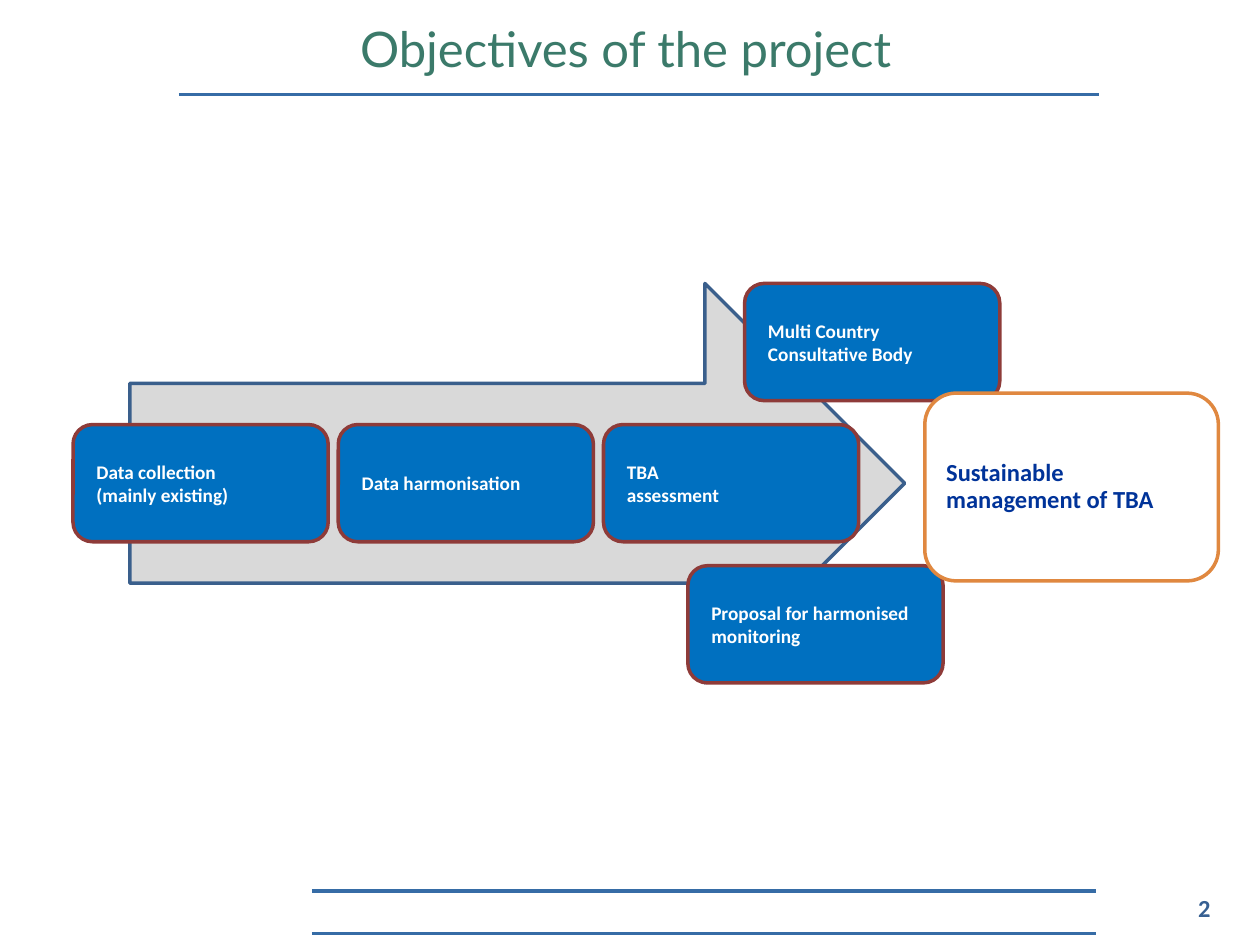
from lxml.etree import SubElement
from pptx import Presentation
from pptx.dml.color import RGBColor
from pptx.enum.shapes import MSO_CONNECTOR, MSO_SHAPE
from pptx.enum.text import MSO_ANCHOR, PP_ALIGN
from pptx.oxml.ns import qn
from pptx.util import Inches, Pt

COLORS = {
    "rule": "366CA6",
    "title": "3B7A6A",
    "number": "376092",
    "arrow": "D9D9D9",
    "arrow_edge": "3A5F8C",
    "card": "0070C0",
    "card_edge": "8E3B39",
    "goal_edge": "E08840",
    "goal_text": "003399",
    "white": "FFFFFF",
}
COLUMNS, ROWS = 100, 75
CARD_SIZE = (20.25, 9.3)
STEP_LEFT, STEP_TOP, STEP_PITCH = 5.8, 33.7, 21.05


class SlideBuilder:
    def __init__(self, presentation):
        self.slide = presentation.slides.add_slide(presentation.slide_layouts[5])
        self.column = presentation.slide_width / COLUMNS
        self.row = presentation.slide_height / ROWS

    def place(self, left, top, width, height):
        return (round(left * self.column), round(top * self.row),
                round(width * self.column), round(height * self.row))

    def color(self, name):
        return RGBColor.from_string(COLORS[name])

    def set_text(self, shape, text, size, color, bold=True, font="Calibri",
                 inset=(0, 0), anchor=MSO_ANCHOR.MIDDLE, align=PP_ALIGN.LEFT,
                 line_spacing=None):
        frame = shape.text_frame
        frame.text = text
        horizontal, vertical = (Inches(value) for value in inset)
        frame_format = {
            "word_wrap": True, "vertical_anchor": anchor,
            "margin_left": horizontal, "margin_right": horizontal,
            "margin_top": vertical, "margin_bottom": vertical,
        }
        paragraph = frame.paragraphs[0]
        paragraph_format = {"alignment": align, "line_spacing": line_spacing}
        font_format = {"name": font, "size": Pt(size), "bold": bold}
        formats = [(frame, frame_format), (paragraph, paragraph_format)]
        formats += [(run.font, font_format) for run in paragraph.runs]
        for target, values in formats:
            for name, value in values.items():
                setattr(target, name, value)
        for run in paragraph.runs:
            run.font.color.rgb = self.color(color)

    def title(self, box, text):
        shape = self.slide.shapes.title
        shape.left, shape.top, shape.width, shape.height = self.place(*box)
        self.set_text(shape, text, 28, "title", bold=False, font="Lato",
                      inset=(0.04, 0.04), align=PP_ALIGN.CENTER)

    def rule(self, left, right, top):
        x, y, width, _ = self.place(left, top, right - left, 0)
        connector = self.slide.shapes.add_connector(
            MSO_CONNECTOR.STRAIGHT, x, y, x + width, y)
        connector.line.color.rgb = self.color("rule")
        connector.line.width = Pt(2)
        SubElement(connector._element.spPr, qn("a:effectLst"))

    def shape(self, kind, box, fill, edge):
        shape = self.slide.shapes.add_shape(kind, *self.place(*box))
        shape.shadow.inherit = False
        shape.fill.solid()
        shape.fill.fore_color.rgb = self.color(fill)
        shape.line.color.rgb = self.color(edge)
        shape.line.width = Pt(2)
        return shape

    def card(self, left, top, text):
        shape = self.shape(MSO_SHAPE.ROUNDED_RECTANGLE, (left, top, *CARD_SIZE),
                           "card", "card_edge")
        self.set_text(shape, text, 11, "white", inset=(0.14, 0.07))

    def step(self, index, text):
        self.card(STEP_LEFT + index * STEP_PITCH, STEP_TOP, text)

    def text(self, box, text, **style):
        shape = self.slide.shapes.add_textbox(*self.place(*box))
        self.set_text(shape, text, 14, **style)


def main():
    presentation = Presentation()
    presentation.slide_width, presentation.slide_height = Inches(10), Inches(7.5)
    builder = SlideBuilder(presentation)

    builder.title((7.5, 1.7, 84.3, 4.2), "Objectives of the project")
    for left, right, top in ((14.2, 87.2, 7.5), (24.75, 87, 70.7), (24.75, 87, 74.1)):
        builder.rule(left, right, top)
    builder.text((95.1, 70.9, 2.8, 2.9), "2", color="number", anchor=MSO_ANCHOR.TOP)

    builder.shape(MSO_SHAPE.RIGHT_ARROW, (10.3, 22.5, 61.5, 31.7), "arrow", "arrow_edge")
    builder.step(0, "Data collection\v(mainly existing)")
    builder.step(1, "Data harmonisation")
    builder.card(54.6, 44.9, "Proposal for harmonised monitoring")
    builder.card(59.1, 22.5, "Multi Country\vConsultative Body")
    builder.shape(MSO_SHAPE.ROUNDED_RECTANGLE, (73.4, 31.2, 23.3, 14.9), "white", "goal_edge")
    builder.text((74.5, 31.8, 21, 13.7), "Sustainable management of TBA",
                 color="goal_text", inset=(0.06, 0.06), line_spacing=0.9)
    builder.step(2, "TBA\vassessment")

    presentation.save("out.pptx")


if __name__ == "__main__":
    main()
